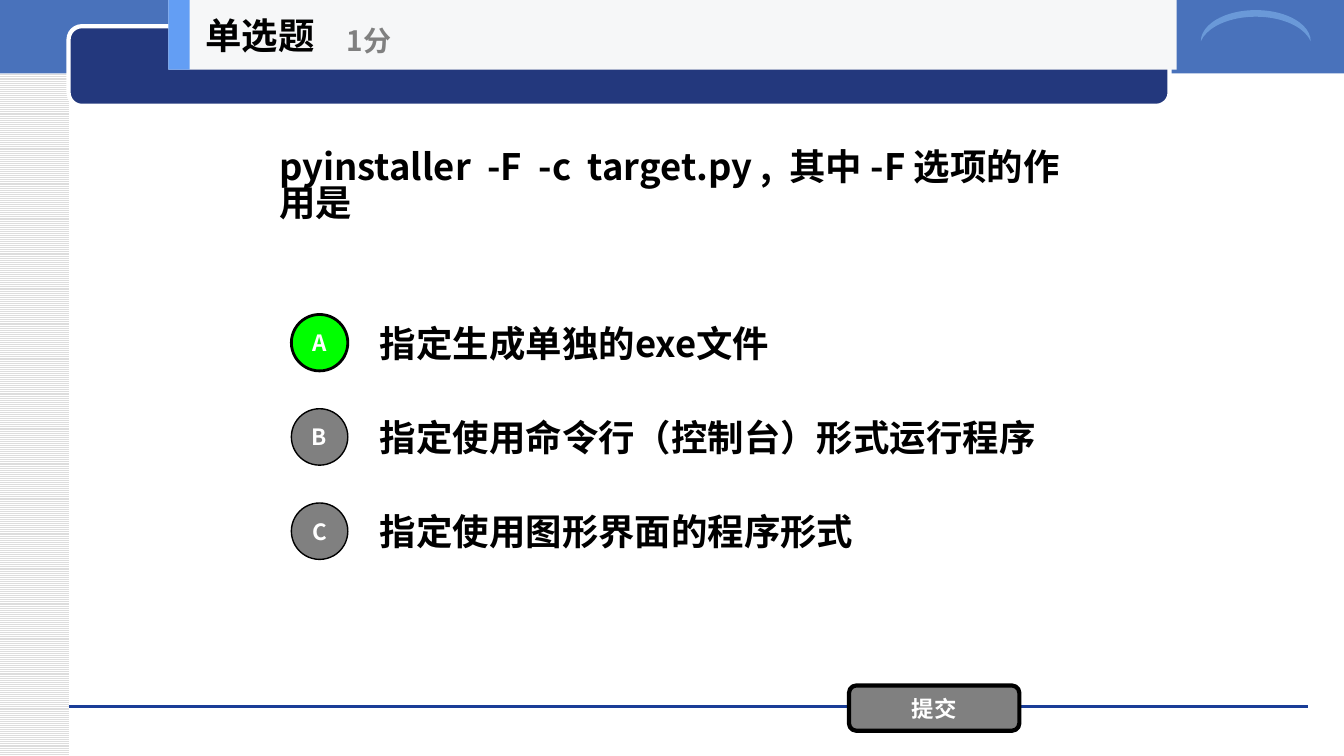
from dataclasses import dataclass

from lxml import etree
from pptx import Presentation
from pptx.dml.color import RGBColor
from pptx.enum.dml import MSO_PATTERN
from pptx.enum.shapes import MSO_CONNECTOR, MSO_SHAPE
from pptx.enum.text import MSO_ANCHOR, MSO_AUTO_SIZE, PP_ALIGN
from pptx.oxml.ns import qn
from pptx.util import Inches, Pt

RECTANGLE = MSO_SHAPE.RECTANGLE
ROUNDED = MSO_SHAPE.ROUNDED_RECTANGLE
OVAL = MSO_SHAPE.OVAL
MOON = MSO_SHAPE.MOON
STRAIGHT = MSO_CONNECTOR.STRAIGHT
LIGHT_HORIZONTAL = MSO_PATTERN.LIGHT_HORIZONTAL
MIDDLE = MSO_ANCHOR.MIDDLE
NO_AUTOFIT = MSO_AUTO_SIZE.NONE
LEFT, CENTER = PP_ALIGN.LEFT, PP_ALIGN.CENTER


@dataclass(frozen=True)
class Theme:
    font: str = "Noto Sans CJK SC"
    large: int = 26
    medium: int = 20
    small: int = 16
    black: str = "000000"
    white: str = "FFFFFF"
    gray: str = "808080"
    stripe: str = "DDDDDD"
    sky: str = "4972BB"
    navy: str = "23387D"
    rule: str = "1A3D97"
    crescent: str = "6A99D8"
    panel: str = "F6F7F8"
    accent: str = "639EF4"
    correct: str = "00FF00"


theme = Theme()


def add_block(kind, left, top, width, height, fill, line=None, points=0):
    block = page.shapes.add_shape(
        kind, Inches(left), Inches(top), Inches(width), Inches(height))
    block.shadow.inherit = False
    block.fill.solid()
    block.fill.fore_color.rgb = RGBColor.from_string(fill)
    if line:
        block.line.color.rgb = RGBColor.from_string(line)
        block.line.width = Pt(points)
    else:
        block.line.fill.background()
    return block


def write(box, text, size, color, align=LEFT):
    frame = box.text_frame
    frame.word_wrap = True
    frame.auto_size = NO_AUTOFIT
    frame.vertical_anchor = MIDDLE
    para = frame.paragraphs[0]
    para.alignment = align
    span = para.add_run()
    span.text = text
    span.font.size = Pt(size)
    span.font.bold = True
    span.font.name = theme.font
    span.font.color.rgb = RGBColor.from_string(color)
    east_asian = etree.SubElement(span.font._element, qn("a:ea"))
    east_asian.set("typeface", theme.font)
    return para


deck = Presentation()
deck.slide_width = Inches(13.33)
deck.slide_height = Inches(7.5)
page = deck.slides.add_slide(deck.slide_layouts.get_by_name("Title Only"))

# Striped margin and top band
margin = add_block(RECTANGLE, 0, 0, 0.68, 7.5, theme.white)
margin.fill.patterned()
margin.fill.pattern = LIGHT_HORIZONTAL
margin.fill.fore_color.rgb = RGBColor.from_string(theme.stripe)
margin.fill.back_color.rgb = RGBColor.from_string(theme.white)
add_block(RECTANGLE, 0, -0.03, 13.33, 0.76, theme.sky)

# Footer rule
footer = page.shapes.add_connector(
    STRAIGHT, Inches(0.68), Inches(7.01), Inches(12.97), Inches(7.01))
footer.line.color.rgb = RGBColor.from_string(theme.rule)
footer.line.width = Pt(0)
etree.SubElement(footer._element.spPr, qn("a:effectLst"))

# Navy banner and crescent
banner = add_block(ROUNDED, 0.68, 0.26, 10.92, 0.79, theme.navy, theme.white, 3)
banner.adjustments[0] = 0.167
crescent = add_block(MOON, 12.3, -0.29, 0.31, 1.09, theme.crescent)
crescent.adjustments[0] = 0.212
crescent.rotation = 90

# Question
question = page.shapes.title
question.left, question.top = Inches(2.67), Inches(0.69)
question.width, question.height = Inches(8), Inches(2.34)
para = write(question, "pyinstaller  -F  -c  target.py ,  其中 -F 选项的作用是",
             theme.large, theme.black)
para.line_spacing = 0.83

# Answer options
options = [
    ("A", "指定生成单独的exe文件", theme.correct, 2),
    ("B", "指定使用命令行（控制台）形式运行程序", theme.gray, 1),
    ("C", "指定使用图形界面的程序形式", theme.gray, 1),
]
for row, (letter, answer, fill, points) in enumerate(options):
    top = 3.05 + row * 0.935
    answer_box = page.shapes.add_textbox(
        Inches(3.67), Inches(top), Inches(7), Inches(0.7))
    write(answer_box, answer, theme.large, theme.black)
    badge = add_block(OVAL, 2.89, top + 0.07, 0.56, 0.56, fill, theme.black, points)
    badge.text_frame.margin_left = badge.text_frame.margin_right = 0
    write(badge, letter, theme.small, theme.white, CENTER)

# Submit button
button = add_block(ROUNDED, 8.42, 6.8, 1.69, 0.45, theme.gray, theme.black, 3)
write(button, "提交", theme.small, theme.white, CENTER)

# Question type header
add_block(RECTANGLE, 1.67, 0, 10, 0.69, theme.panel)
add_block(RECTANGLE, 1.67, 0, 0.21, 0.69, theme.accent)
labels = [
    ("单选题", 1.94, 0, 2.08, 0.69, theme.large, theme.black),
    ("1分", 3.34, 0.12, 2.5, 0.56, theme.medium, theme.gray),
]
for text, left, top, width, height, size, color in labels:
    label = page.shapes.add_textbox(
        Inches(left), Inches(top), Inches(width), Inches(height))
    write(label, text, size, color)

deck.save("out.pptx")
